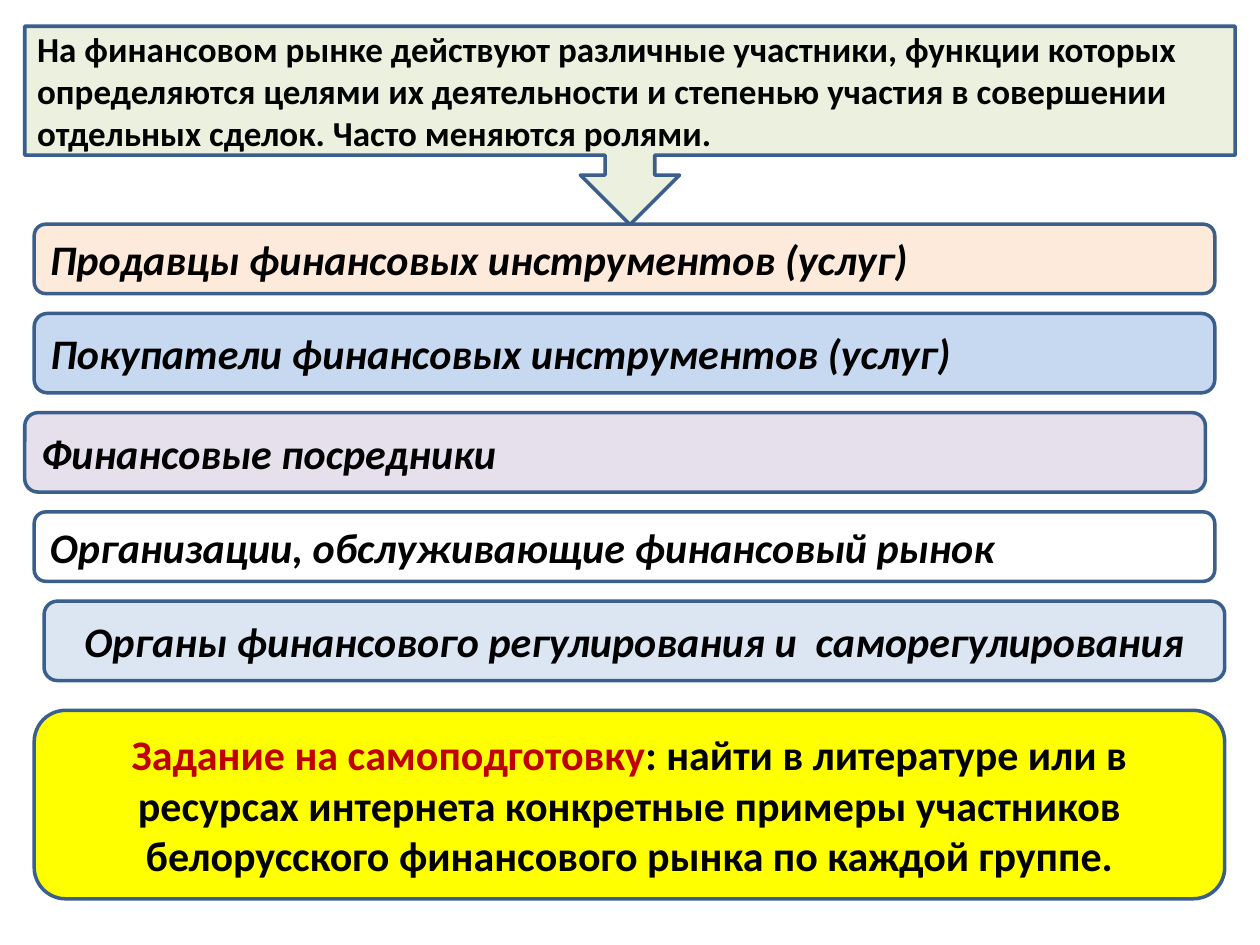
import pptx
import pptx.dml.color
import pptx.enum.shapes
import pptx.enum.text
import pptx.util

Cm = pptx.util.Cm
SHAPES = pptx.enum.shapes.MSO_SHAPE
ALIGN = pptx.enum.text.PP_ALIGN
BLACK = "000000"
OUTLINE = "3A5F8C"
INTRODUCTION = (
    "На финансовом рынке действуют различные участники, функции которых "
    "определяются целями их деятельности и степенью участия в совершении "
    "отдельных сделок. Часто меняются ролями."
)
TASK = [
    ("Задание на самоподготовку", "C00000"),
    (": найти в литературе или в ресурсах интернета конкретные примеры "
     "участников белорусского финансового рынка по каждой группе.", BLACK),
]
PARTICIPANTS = [
    ("Продавцы финансовых инструментов (услуг)", 0.69, 1.4, "FDEADA", ALIGN.LEFT),
    ("Покупатели финансовых инструментов (услуг)", 0.69, 1.6, "C6D9F1", ALIGN.LEFT),
    ("Финансовые посредники", 0.5, 1.6, "E6E0EC", ALIGN.LEFT),
    ("Организации, обслуживающие финансовый рынок", 0.69, 1.4, "FFFFFF", ALIGN.LEFT),
    ("Органы финансового регулирования и  саморегулирования", 0.89, 1.6, "DCE6F2",
     ALIGN.CENTER),
]
FIRST_ROW_TOP = 4.52
ROW_WIDTH = 23.8
ROW_GAP = 0.4


def color(value):
    return pptx.dml.color.RGBColor.from_string(value)


def add_run(paragraph, text, text_color, font_format):
    run = paragraph.add_run()
    run.text = text
    for name, value in font_format.items():
        setattr(run.font, name, value)
    run.font.color.rgb = color(text_color)


def add_box(slide, kind, bounds, fill, runs, alignment=ALIGN.LEFT, size=24, italic=None):
    """Add an outlined box with bounds in centimetres and bold coloured runs."""
    shape = slide.shapes.add_shape(kind, *map(Cm, bounds))
    shape.shadow.inherit = False
    shape.fill.solid()
    shape.fill.fore_color.rgb = color(fill)
    shape.line.color.rgb = color(OUTLINE)
    shape.line.width = pptx.util.Pt(2)
    frame = shape.text_frame
    frame.word_wrap = True
    frame.vertical_anchor = pptx.enum.text.MSO_ANCHOR.MIDDLE
    paragraph = frame.paragraphs[0]
    paragraph.alignment = alignment
    font_format = {
        "name": "Calibri", "size": pptx.util.Pt(size), "bold": True, "italic": italic,
    }
    for text, text_color in runs:
        add_run(paragraph, text, text_color, font_format)


def add_participants(slide):
    top = FIRST_ROW_TOP
    for text, left, height, fill, alignment in PARTICIPANTS:
        add_box(slide, SHAPES.ROUNDED_RECTANGLE, (left, top, ROW_WIDTH, height),
                fill, [(text, BLACK)], alignment, italic=True)
        top += height + ROW_GAP


def main():
    presentation = pptx.Presentation()
    presentation.slide_width = Cm(25.4)
    presentation.slide_height = Cm(19.05)
    slide = presentation.slides.add_slide(presentation.slide_layouts[6])
    add_box(slide, SHAPES.DOWN_ARROW_CALLOUT, (0.5, 0.53, 24.4, 4),
            "EBF1DE", [(INTRODUCTION, BLACK)], size=20)
    add_participants(slide)
    add_box(slide, SHAPES.ROUNDED_RECTANGLE, (0.69, 14.32, 24, 3.8),
            "FFFF00", TASK, ALIGN.CENTER)
    presentation.save("out.pptx")


if __name__ == "__main__":
    main()
